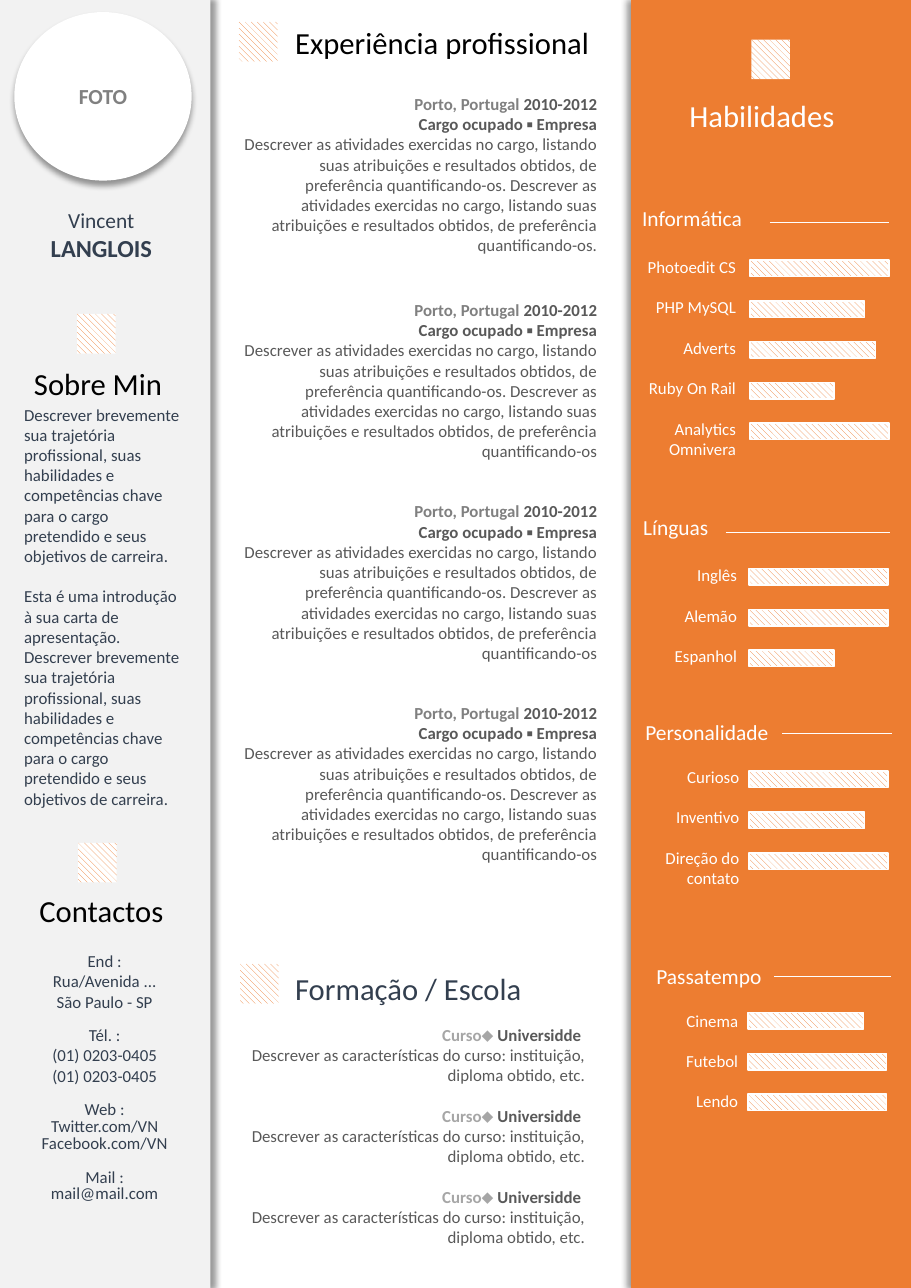
from dataclasses import dataclass

from lxml import etree
from pptx import Presentation
from pptx.dml.color import RGBColor
from pptx.enum.dml import MSO_PATTERN
from pptx.enum.shapes import MSO_CONNECTOR, MSO_SHAPE
from pptx.enum.text import MSO_ANCHOR, MSO_AUTO_SIZE, PP_ALIGN
from pptx.oxml import parse_xml
from pptx.oxml.ns import nsdecls, qn
from pptx.util import Emu, Pt

RECT, OVAL = MSO_SHAPE.RECTANGLE, MSO_SHAPE.OVAL
LEFT, MID, RIGHT = PP_ALIGN.LEFT, PP_ALIGN.CENTER, PP_ALIGN.RIGHT
FIT = MSO_AUTO_SIZE.SHAPE_TO_FIT_TEXT
STRIPE = MSO_PATTERN.WIDE_DOWNWARD_DIAGONAL
LINE = MSO_CONNECTOR.STRAIGHT
PX = 9144


@dataclass(frozen=True)
class Theme:
    font: str = "Calibri"
    body: int = 11
    sub: int = 14
    name: int = 16
    head: int = 20
    gap: float = 13.2
    white: RGBColor = RGBColor(255, 255, 255)
    black: RGBColor = RGBColor(0, 0, 0)
    pale: RGBColor = RGBColor(0xF2, 0xF2, 0xF2)
    accent: RGBColor = RGBColor(0xED, 0x7D, 0x31)
    navy: RGBColor = RGBColor(0x33, 0x3F, 0x4F)
    dark: RGBColor = RGBColor(0x59, 0x59, 0x59)
    gray: RGBColor = RGBColor(0x80, 0x80, 0x80)
    light: RGBColor = RGBColor(0xA6, 0xA6, 0xA6)


T = Theme()

TITLE = ("Experiência profissional", (258, 17, 290, 44))
HEADS = [
    ("Sobre Min", (21, 326, 138, 44), T.black),
    ("Habilidades", (616, 83, 153, 44), T.white),
    ("Formação / Escola", (258, 875, 228, 44), T.navy),
    ("Contactos", (26, 805, 134, 44), T.black),
]
ICONS = [(70, 285), (71, 765), (217, 20), (218, 875), (682, 36)]
BRIEF = (
    "Descrever brevemente sua trajetória profissional, suas habilidades e "
    "competências chave para o cargo pretendido e seus objetivos de carreira."
)
ABOUT = [BRIEF, "Esta é uma introdução à sua carta de apresentação. " + BRIEF]
DUTY = (
    "Descrever as atividades exercidas no cargo, listando suas atribuições e "
    "resultados obtidos, de preferência quantificando-os"
)
JOBS = [
    (0, f"{DUTY}. {DUTY}."),
    (29, f"{DUTY}. {DUTY}"),
    (26, f"{DUTY}. {DUTY}"),
    (26, f"{DUTY}. {DUTY}"),
]
COURSE = "Descrever as características do curso: instituição, diploma obtido, etc."
CONTACT = [
    (["End :", "Rua/Avenida ...", "São Paulo - SP"], 0),
    (["Tél. :", "(01) 0203-0405", "(01) 0203-0405"], 1),
    (["Web :", "Twitter.com/VN", "Facebook.com/VN"], 3),
    (["Mail :", "mail@mail.com"], 2),
]
SKILLS = [
    ("Informática", (573, 181, 112), (699, 807, 202), (572, 228), (681, 236),
     [("Photoedit CS", 126), ("PHP MySQL", 104), ("Adverts", 114),
      ("Ruby On Rail", 76), ("Analytics Omnivera", 126)]),
    ("Línguas", (574, 462, 80), (659, 808, 483), (573, 508), (680, 516),
     [("Inglês", 126), ("Alemão", 126), ("Espanhol", 77)]),
    ("Personalidade", (576, 648, 133), (710, 810, 666), (575, 691), (680, 700),
     [("Curioso", 126), ("Inventivo", 105), ("Direção do contato", 126)]),
    ("Passatempo", (586, 869, 117), (703, 809, 886), (574, 912), (679, 919),
     [("Cinema", 105), ("Futebol", 126), ("Lendo", 126)]),
]
PITCH, THICK = 37, 15

deck = Presentation()
deck.slide_width, deck.slide_height = Emu(827 * PX), Emu(1169 * PX)
slide = deck.slides.add_slide(deck.slide_layouts[5])
shapes = slide.shapes


def scale(box):
    return [Emu(n * PX) for n in box]


def para(text, size=T.body, color=T.navy, bold=False, before=0, exact=None):
    return text, size, color, bold, before, exact


def write(frame, paras, align):
    for i, (text, size, color, bold, before, exact) in enumerate(paras):
        p = frame.paragraphs[0] if i == 0 else frame.add_paragraph()
        p.alignment = align
        p.space_before = Pt(before)
        if exact:
            p.line_spacing = Pt(exact)
        p.font.name, p.font.size, p.font.bold = T.font, Pt(size), bold
        if isinstance(text, str):
            p.font.color.rgb = color
            p.add_run().text = text
        else:
            for part, tone in text:
                run = p.add_run()
                run.text = part
                run.font.color.rgb = tone


def label(box, paras, align=LEFT, wrap=True, inset=True):
    frame = shapes.add_textbox(*scale(box)).text_frame
    frame.word_wrap, frame.auto_size = wrap, FIT
    if not inset:
        frame.margin_left = frame.margin_right = 0
        frame.margin_top = frame.margin_bottom = 0
    write(frame, paras, align)


def block(box, color, turn, kind=RECT):
    shape = shapes.add_shape(kind, *scale(box))
    shape.fill.solid()
    shape.fill.fore_color.rgb = color
    shape.line.fill.background()
    shape.shadow.inherit = False
    glow = shape._element.spPr.find(qn("a:effectLst"))
    glow.append(parse_xml(
        f'<a:outerShdw {nsdecls("a")} blurRad="50800" dist="38100" '
        f'dir="{turn * 60000}" algn="ctr" rotWithShape="0">'
        '<a:srgbClr val="000000"><a:alpha val="40000"/></a:srgbClr></a:outerShdw>'))
    return shape


def hatch(box, edge=False):
    shape = shapes.add_shape(RECT, *scale(box))
    shape.shadow.inherit = False
    shape.fill.patterned()
    shape.fill.pattern = STRIPE
    shape.fill.fore_color.rgb = T.accent
    shape.fill.back_color.rgb = T.white
    if edge:
        shape.line.color.rgb, shape.line.width = T.white, Pt(1)
    else:
        shape.line.fill.background()


def rule(start, end, y):
    line = shapes.add_connector(LINE, *scale((start, y, end, y)))
    line.line.color.rgb, line.line.width = T.white, Pt(0.5)
    etree.SubElement(line._element.spPr, qn("a:effectLst"))


block((0, 0, 191, 1169), T.pale, 0)
block((573, 0, 254, 1169), T.accent, 180)

text, box = TITLE
title = shapes.title
title.left, title.top, title.width, title.height = scale(box)
frame = title.text_frame
frame.word_wrap, frame.auto_size = False, FIT
frame.vertical_anchor = MSO_ANCHOR.TOP
write(frame, [para(text, T.head, T.black)], LEFT)

for text, box, color in HEADS:
    label(box, [para(text, T.head, color)], wrap=False)

label((12, 362, 162, 380),
      [para(t, before=i * T.gap) for i, t in enumerate(ABOUT)])
label((14, 183, 156, 61),
      [para("Vincent", T.sub), para("LANGLOIS", T.name, bold=True)], MID)

jobs = []
for before, duty in JOBS:
    jobs += [
        para([("Porto, Portugal ", T.gray), ("2010-2012", T.dark)],
             bold=True, before=before),
        para("Cargo ocupado ▪ Empresa", color=T.dark, bold=True),
        para(duty, color=T.dark),
    ]
label((211, 80, 341, 755), jobs, RIGHT)

study = []
for i in range(3):
    study += [
        para([("Curso⬥ ", T.light), ("Universidde ", T.dark)],
             bold=True, before=T.gap if i else 0),
        para(COURSE, color=T.dark),
    ]
label((209, 925, 332, 232), study, RIGHT)

reach = [
    para(t, before=11 if g and i == 0 else 0, exact=11 if i < tight else None)
    for g, (lines, tight) in enumerate(CONTACT) for i, t in enumerate(lines)
]
label((14, 863, 162, 237), reach, MID, inset=False)

for head, (x, y, w), line, names, bars, items in SKILLS:
    label((x, y, w, 34), [para(head, T.sub, T.white)], wrap=False)
    rule(*line)
    label((*names, 106, PITCH * len(items)),
          [para(t, color=T.white, before=T.gap if i else 0)
           for i, (t, _) in enumerate(items)], RIGHT)
    for i, (_, width) in enumerate(items):
        hatch((bars[0], bars[1] + i * PITCH, width, THICK), True)

photo = block((13, 11, 161, 153), T.white, 90, OVAL).text_frame
photo.vertical_anchor = MSO_ANCHOR.MIDDLE
write(photo, [para("FOTO", T.sub, T.gray, True)], MID)

for x, y in ICONS:
    hatch((x, y, 35, 36))

deck.save("out.pptx")
